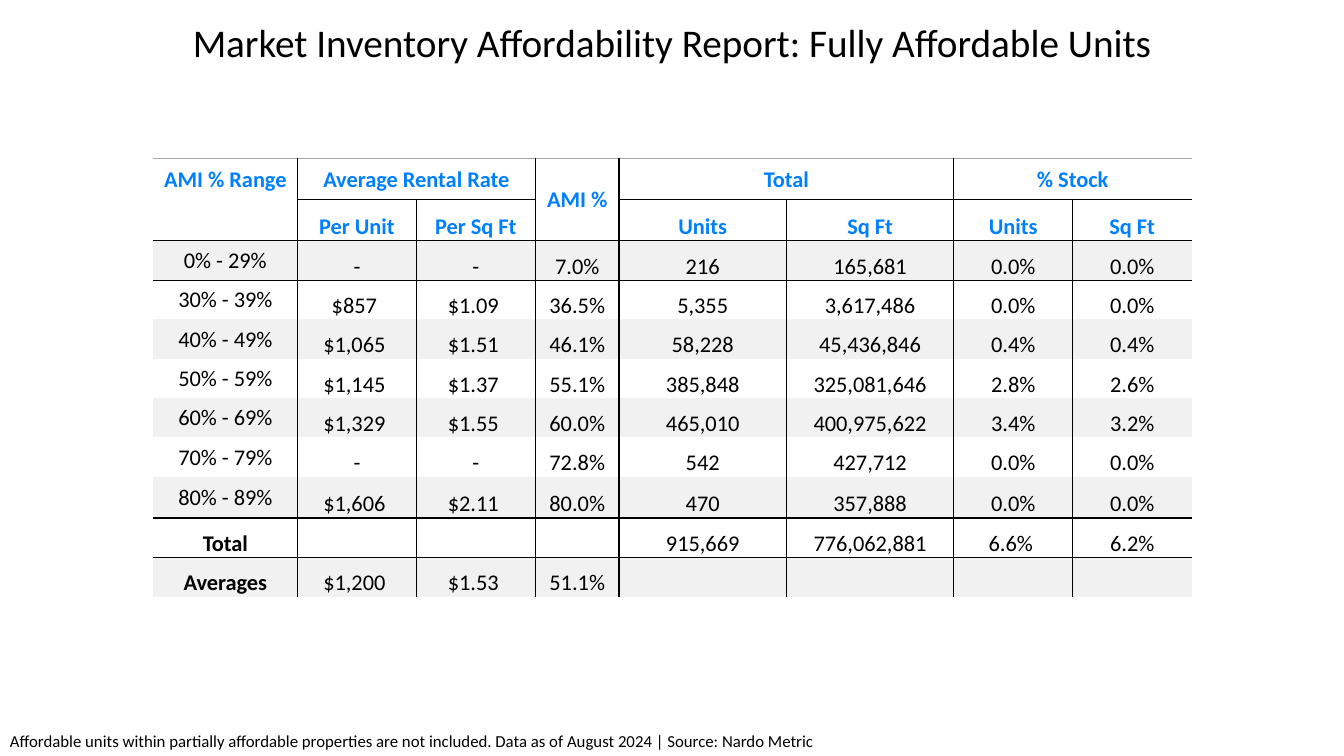
from dataclasses import dataclass

from lxml import etree
from pptx import Presentation
from pptx import util as u
from pptx.dml.color import RGBColor
from pptx.enum import text
from pptx.oxml import ns

FONT = "Calibri"
BLACK, BLUE, GREY, BAND = "000000", "007FFF", "A9A9A9", "F1F1F1"
PLAIN_STYLE = "{2D5ABB26-0587-4C30-8999-92F81FD0307C}"

COLUMN_WIDTHS = [1.43, 1.18, 1.18, 0.83, 1.66, 1.66, 1.18, 1.18]
ROW_HEIGHTS = [0.41] * 2 + [0.39] * 6 + [0.41] + [0.39] * 2
HEADER_ROWS = 2
TOTAL_ROW = 9
MERGES = [((0, 1), (0, 2)), ((0, 3), (1, 3)), ((0, 4), (0, 5)), ((0, 6), (0, 7))]
ROWS = [
    ["AMI % Range", "Average Rental Rate", "", "AMI %", "Total", "", "% Stock", ""],
    ["", "Per Unit", "Per Sq Ft", "", "Units", "Sq Ft", "Units", "Sq Ft"],
    ["0% - 29%", "-", "-", "7.0%", "216", "165,681", "0.0%", "0.0%"],
    ["30% - 39%", "$857 ", "$1.09 ", "36.5%", "5,355", "3,617,486", "0.0%", "0.0%"],
    ["40% - 49%", "$1,065 ", "$1.51 ", "46.1%", "58,228", "45,436,846", "0.4%", "0.4%"],
    ["50% - 59%", "$1,145 ", "$1.37 ", "55.1%", "385,848", "325,081,646", "2.8%", "2.6%"],
    ["60% - 69%", "$1,329 ", "$1.55 ", "60.0%", "465,010", "400,975,622", "3.4%", "3.2%"],
    ["70% - 79%", "-", "-", "72.8%", "542", "427,712", "0.0%", "0.0%"],
    ["80% - 89%", "$1,606 ", "$2.11 ", "80.0%", "470", "357,888", "0.0%", "0.0%"],
    ["Total", "", "", "", "915,669", "776,062,881", "6.6% ", "6.2%"],
    ["Averages", "$1,200 ", "$1.53 ", "51.1%", "", "", "", ""],
]


@dataclass(frozen=True)
class Rule:
    color: str = BLACK
    width: float = 1


# Horizontal rules, keyed by the row they run above.
RULES = {0: Rule(GREY), 1: Rule(), 2: Rule(), TOTAL_ROW: Rule(), 10: Rule(width=0.5)}


def rgb(color: str) -> RGBColor:
    return RGBColor.from_string(color)


def format_para(para, size: float, color: str = BLACK, bold: bool = False) -> None:
    for span in para.runs:
        span.font.name = FONT
        span.font.size = u.Pt(size)
        span.font.bold = bold
        span.font.color.rgb = rgb(color)


def draw_edge(cell, side: str, rule: Rule) -> None:
    """Add a border on side L, R, T or B; call in that order, before the fill."""
    line = etree.SubElement(cell._tc.get_or_add_tcPr(), ns.qn(f"a:ln{side}"),
                            w=str(u.Pt(rule.width)))
    fill = etree.SubElement(line, ns.qn("a:solidFill"))
    etree.SubElement(fill, ns.qn("a:srgbClr"), val=rule.color)


def draw_borders(cell, row: int, column: int) -> None:
    below = row + (cell.span_height if cell.is_merge_origin else 1)
    after = column + (cell.span_width if cell.is_merge_origin else 1)
    if column > 0:
        draw_edge(cell, "L", Rule())
    if after < len(COLUMN_WIDTHS):
        draw_edge(cell, "R", Rule())
    for side, position in (("T", row), ("B", below)):
        inside_range_header = column == 0 and position == 1
        if position in RULES and not inside_range_header:
            draw_edge(cell, side, RULES[position])


def format_cell(cell, row: int, column: int) -> None:
    is_header = row < HEADER_ROWS
    is_middle = row == 0 or (column == 0 and row < TOTAL_ROW)
    cell.text = ROWS[row][column]
    cell.margin_left = cell.margin_right = cell.margin_top = u.Inches(0.01)
    cell.margin_bottom = 0
    cell.vertical_anchor = text.MSO_ANCHOR.MIDDLE if is_middle else text.MSO_ANCHOR.BOTTOM
    para = cell.text_frame.paragraphs[0]
    para.alignment = text.PP_ALIGN.CENTER
    format_para(para, 16, BLUE if is_header else BLACK,
                is_header or (column == 0 and row >= TOTAL_ROW))
    draw_borders(cell, row, column)
    if not is_header and row % 2 == 0:
        cell.fill.solid()
        cell.fill.fore_color.rgb = rgb(BAND)
    else:
        cell.fill.background()


def add_title(page) -> None:
    title = page.shapes.title
    title.left, title.top = u.Inches(0), u.Inches(0.15)
    title.width, title.height = u.Inches(13.33), u.Inches(0.59)
    frame = title.text_frame
    frame.text = "Market Inventory Affordability Report: Fully Affordable Units"
    frame.auto_size = text.MSO_AUTO_SIZE.NONE
    para = frame.paragraphs[0]
    para.alignment = text.PP_ALIGN.CENTER
    para.line_spacing = 0.9
    format_para(para, 28)


def add_affordability_table(page) -> None:
    frame = page.shapes.add_table(
        len(ROWS), len(COLUMN_WIDTHS), u.Inches(1.52), u.Inches(1.57),
        u.Inches(sum(COLUMN_WIDTHS)), u.Inches(sum(ROW_HEIGHTS)))
    table = frame.table
    table.first_row = table.horz_banding = False
    table._tbl.tblPr.find(ns.qn("a:tableStyleId")).text = PLAIN_STYLE
    for column, width in zip(table.columns, COLUMN_WIDTHS):
        column.width = u.Inches(width)
    for row, height in zip(table.rows, ROW_HEIGHTS):
        row.height = u.Inches(height)
    for first, last in MERGES:
        table.cell(*first).merge(table.cell(*last))
    for row in range(len(ROWS)):
        for column in range(len(COLUMN_WIDTHS)):
            cell = table.cell(row, column)
            if not cell.is_spanned:
                format_cell(cell, row, column)


def add_source_note(page) -> None:
    box = page.shapes.add_textbox(u.Inches(0), u.Inches(7.2), u.Inches(11.68), u.Inches(0.3))
    frame = box.text_frame
    frame.word_wrap = True
    frame.auto_size = text.MSO_AUTO_SIZE.SHAPE_TO_FIT_TEXT
    frame.text = ("Affordable units within partially affordable properties are not included. "
                  "Data as of August 2024 | Source: Nardo Metric")
    format_para(frame.paragraphs[0], 12)


def main() -> None:
    deck = Presentation()
    deck.slide_width, deck.slide_height = u.Inches(13.33), u.Inches(7.5)
    page = deck.slides.add_slide(deck.slide_layouts.get_by_name("Title Only"))
    add_title(page)
    add_affordability_table(page)
    add_source_note(page)
    deck.save("out.pptx")


if __name__ == "__main__":
    main()
